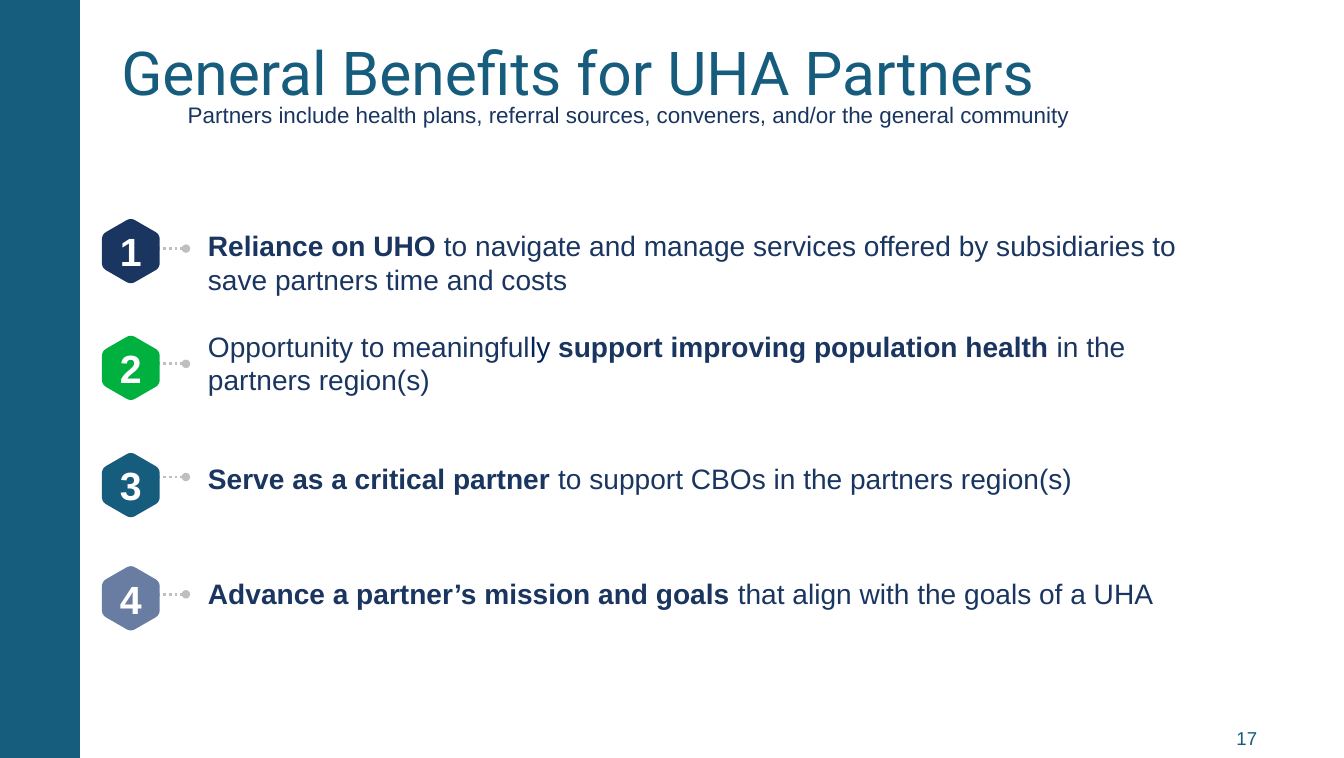
import math
from lxml import etree
from pptx import Presentation
from pptx.dml.color import RGBColor
from pptx.enum import dml, shapes, text
from pptx.oxml import ns
from pptx.util import Inches, Pt

NAVY = RGBColor(0x19, 0x35, 0x60)
DARK_NAVY = RGBColor(0x00, 0x20, 0x60)
TEAL = RGBColor(0x16, 0x5C, 0x7D)
GREEN = RGBColor(0x00, 0xB1, 0x40)
SLATE = RGBColor(0x68, 0x7D, 0xA1)
GRAY = RGBColor(0xBF, 0xBF, 0xBF)
WHITE = RGBColor(0xFF, 0xFF, 0xFF)

HEX_X, HEX_RADIUS, CORNER = 1.295, 0.33, 0.05


def write(shape, runs, size, font="Arial", align=text.PP_ALIGN.LEFT,
          anchor=text.MSO_ANCHOR.MIDDLE):
    """Fill a shape with one paragraph of (words, color, bold) runs."""
    frame = shape.text_frame
    frame.word_wrap = True
    frame.auto_size = text.MSO_AUTO_SIZE.NONE
    frame.vertical_anchor = anchor
    paragraph = frame.paragraphs[0]
    paragraph.alignment = align
    for words, color, bold in runs:
        run = paragraph.add_run()
        run.text = words
        run.font.name = font
        run.font.size = Pt(size)
        run.font.bold = bold
        run.font.color.rgb = color
    return frame


def hexagon_points(center_y):
    """Outline of an upright hexagon with rounded corners, in EMU."""
    corners = [(HEX_X + HEX_RADIUS * math.sin(math.radians(60 * i)),
                center_y - HEX_RADIUS * math.cos(math.radians(60 * i))) for i in range(6)]
    share = CORNER / HEX_RADIUS
    points = []
    for i, corner in enumerate(corners):
        before, after = corners[i - 1], corners[(i + 1) % 6]
        for step in range(7):
            t = step / 6
            points.append(tuple(
                Inches(c + share * ((1 - t) ** 2 * (b - c) + t ** 2 * (a - c)))
                for b, c, a in zip(before, corner, after)))
    return points


prs = Presentation()
prs.slide_width, prs.slide_height = Inches(13.3), Inches(7.5)
slide = prs.slides.add_slide(prs.slide_layouts[5])

# Side band
band = slide.shapes.add_shape(shapes.MSO_SHAPE.RECTANGLE, 0, 0, Inches(0.79), Inches(7.5))
band.shadow.inherit = False
band.fill.solid()
band.fill.fore_color.rgb = TEAL
band.line.fill.background()

# Title, subtitle and page number
title = slide.shapes.title
title.left, title.top = Inches(1.1), Inches(0.28)
title.width, title.height = Inches(11.53), Inches(0.85)
write(title, [("General Benefits for UHA Partners", TEAL, False)], 43.1, "Roboto")

subtitle = slide.shapes.add_textbox(Inches(1.76), Inches(0.95), Inches(10.2), Inches(0.37))
write(subtitle, [("Partners include health plans, referral sources, conveners, "
                  "and/or the general community", NAVY, False)],
      16, anchor=text.MSO_ANCHOR.TOP)

page_number = slide.shapes.add_textbox(Inches(11.31), Inches(7.1), Inches(1.23), Inches(0.4))
write(page_number, [("17", TEAL, False)], 13.3, align=text.PP_ALIGN.RIGHT)

# Benefits: hexagon color, hexagon center, pointer height, text top, width and height, runs
benefits = [
    (NAVY, 2.485, 2.46, 2.19, 10.2, 0.81, [
        ("Reliance on UHO ", NAVY, True),
        ("to navigate and manage services offered by subsidiaries to save partners "
         "time and costs", NAVY, False)]),
    (GREEN, 3.64, 3.6, 3.13, 10.09, 0.92, [
        ("Opportunity to meaningful", NAVY, False),
        ("ly ", DARK_NAVY, False),
        ("support improving population health ", NAVY, True),
        ("in the partners region(s)", NAVY, False)]),
    (TEAL, 4.8, 4.72, 4.3, 10.34, 0.86, [
        ("Serve as a critical partner ", NAVY, True),
        ("to support CBOs in the partners region(s)", NAVY, False)]),
    (SLATE, 5.92, 5.88, 5.41, 10.2, 0.92, [
        ("Advance a partner’s mission and goals ", NAVY, True),
        ("that align with the goals of a UHA", NAVY, False)]),
]

for number, (color, center_y, pointer_y, top, width, height, runs) in enumerate(benefits, 1):
    # Benefit wording
    benefit = slide.shapes.add_textbox(Inches(1.96), Inches(top), Inches(width), Inches(height))
    frame = write(benefit, runs, 20)
    frame.margin_top = frame.margin_bottom = Inches(0.1)

    # Dotted pointer with a round end
    pointer = slide.shapes.add_connector(shapes.MSO_CONNECTOR.STRAIGHT, Inches(1.56),
                                         Inches(pointer_y), Inches(1.84), Inches(pointer_y))
    pointer.line.color.rgb = GRAY
    pointer.line.width = Pt(2)
    pointer.line.dash_style = dml.MSO_LINE.ROUND_DOT
    etree.SubElement(pointer.line._get_or_add_ln(), ns.qn("a:tailEnd"), type="oval")
    etree.SubElement(pointer._element.spPr, ns.qn("a:effectLst"))

    # Rounded hexagon
    points = hexagon_points(center_y)
    outline = slide.shapes.build_freeform(*points[0], scale=1.0)
    outline.add_line_segments(points[1:], close=True)
    hexagon = outline.convert_to_shape()
    hexagon.shadow.inherit = False
    hexagon.fill.solid()
    hexagon.fill.fore_color.rgb = color
    hexagon.line.fill.background()

    # Number
    label = slide.shapes.add_textbox(Inches(1.01), Inches(center_y - 0.24),
                                     Inches(0.57), Inches(0.48))
    write(label, [(str(number), WHITE, True)], 28, align=text.PP_ALIGN.CENTER)

prs.save("out.pptx")
